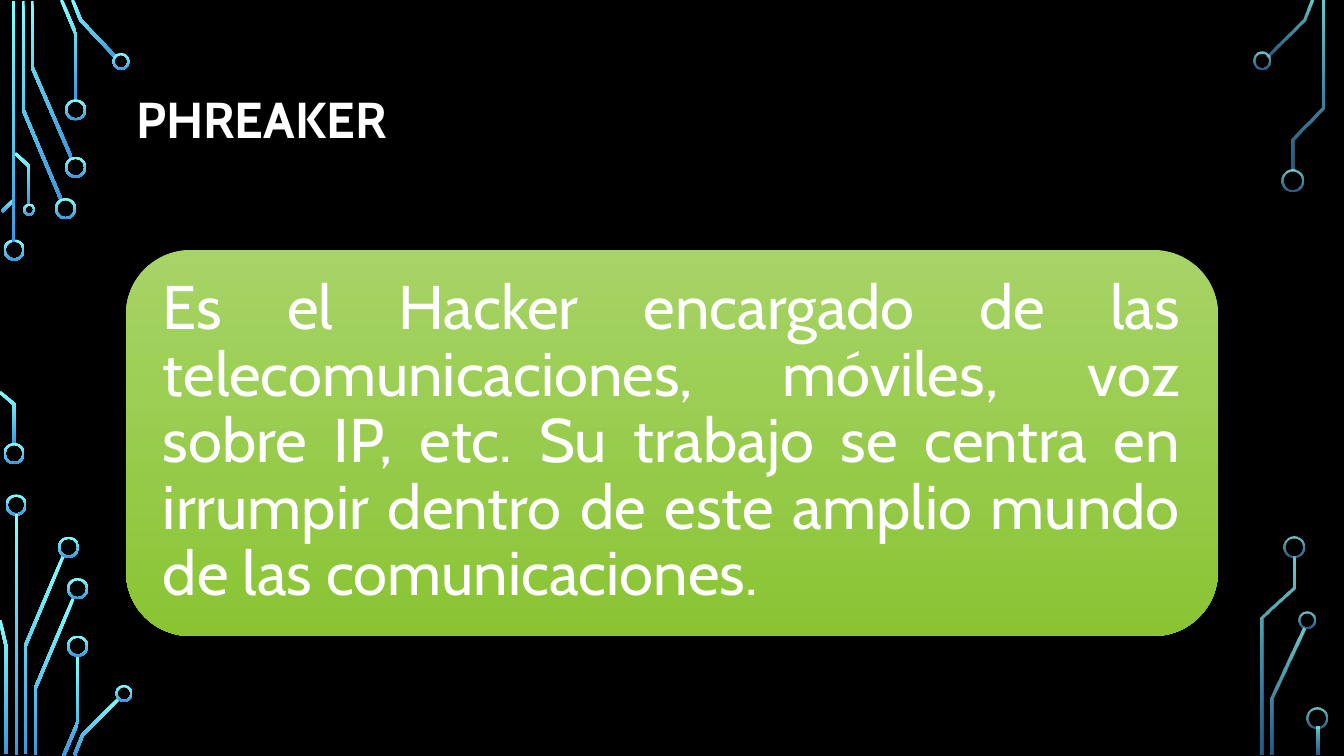
from math import hypot

from lxml.etree import SubElement
from pptx import Presentation
from pptx.dml.color import RGBColor
from pptx.enum.shapes import MSO_SHAPE as Shape
from pptx.enum.text import MSO_ANCHOR as Anchor, PP_ALIGN as Align
from pptx.oxml.ns import qn
from pptx.util import Inches, Pt

COLORS = {
    "background": "000000",
    "text": "FFFFFF",
    "trace_top": "82FFFF",
    "trace_bottom": "3D97DE",
    "panel_top": "A6D467",
    "panel_bottom": "8AC433",
}
FONT = "Cabin"
TRACE_WIDTH = 0.03
RING_WIDTH = 0.02

# Traces are centre lines, rings are (centre x, centre y, diameter),
# bars are (left, top, height); all in inches from the panel corner.
LEFT_CIRCUIT = {
    "traces": [
        [(0.61, 1.99), (0.23, 1.09), (0.23, 0.01)],
        [(0.71, 1.57), (0.32, 0.67), (0.32, 0.01)],
        [(0.75, 1), (0.75, 0.33), (0.61, 0)],
        [(1.15, 0.57), (0.8, 0.2), (0.72, 0)],
        [(0.02, 2.1), (0.14, 1.98)],
        [(0.14, 4.41), (0.14, 4.01), (0, 3.89)],
        [(0.29, 2.03), (0.29, 1.65), (0.15, 1.52)],
        [(0.25, 7.48), (0.25, 6.41), (0.63, 5.51)],
        [(0.06, 7.48), (0.06, 6.41), (0, 6.15)],
        [(0.35, 7.49), (0.35, 6.83), (0.73, 5.93)],
        [(0.63, 7.5), (0.77, 7.17), (0.77, 6.5)],
        [(0.74, 7.49), (0.82, 7.29), (1.18, 6.93)],
    ],
    "rings": [
        (0.14, 2.48, 0.21), (0.14, 4.5, 0.21), (0.65, 2.07, 0.21),
        (0.75, 1.66, 0.21), (0.75, 1.09, 0.21), (1.2, 0.61, 0.17),
        (0.29, 2.08, 0.12), (0.16, 5.01, 0.21), (0.68, 5.43, 0.21),
        (0.77, 5.84, 0.21), (0.77, 6.41, 0.21), (1.23, 6.88, 0.17),
    ],
    "bars": [(0.12, 0.01, 2.39), (0.15, 5.1, 2.39)],
}
RIGHT_CIRCUIT = {
    "traces": [
        [(0.17, 0.56), (0.53, 0.2), (0.61, 0)],
        [(0.22, 7.49), (0.22, 6.93), (0.53, 6.23)],
        [(0.42, 1.69), (0.42, 1.38), (0.72, 1.07), (0.72, 0.01)],
        [(0.12, 7.49), (0.12, 6.13), (0.43, 5.83), (0.43, 5.52)],
    ],
    "rings": [
        (0.12, 0.6, 0.17), (0.42, 1.79, 0.21), (0.56, 6.15, 0.17),
        (0.43, 5.43, 0.21), (0.66, 7.12, 0.21),
    ],
    "bars": [(0.66, 7.21, 0.28)],
}


def paint(shape, top, bottom, opacity=None):
    """Fill with a downward gradient, without line or shadow."""
    shape.shadow.inherit = False
    shape.line.fill.background()
    shape.fill.gradient()
    shape.fill.gradient_angle = 270
    for stop, name in zip(shape.fill.gradient_stops, (top, bottom)):
        stop.color.rgb = RGBColor.from_string(COLORS[name])
    if opacity:
        stops = shape._element.spPr.iter(qn("a:srgbClr"))
        for color, percent in zip(stops, opacity):
            SubElement(color, qn("a:alpha")).set("val", str(percent * 1000))


def write(frame, text, size, bold=False, align=Align.LEFT, anchor=Anchor.MIDDLE,
          insets=(0.1, 0.05, 0.1, 0.05)):
    frame.word_wrap = True
    frame.vertical_anchor = anchor
    (frame.margin_left, frame.margin_top,
     frame.margin_right, frame.margin_bottom) = map(Inches, insets)
    para = frame.paragraphs[0]
    para.alignment = align
    para.line_spacing = 0.9
    span = para.add_run()
    span.text = text
    span.font.name = FONT
    span.font.size = Pt(size)
    span.font.bold = bold
    span.font.color.rgb = RGBColor.from_string(COLORS["text"])


def trace_outline(points):
    """Widen a centre line into a closed band with mitred corners."""
    normals = []
    for (x1, y1), (x2, y2) in zip(points, points[1:]):
        length = hypot(x2 - x1, y2 - y1)
        normals.append(((y1 - y2) / length, (x2 - x1) / length))
    before, after = normals[:1] + normals, normals + normals[-1:]
    one_side, other_side = [], []
    for (x, y), (ax, ay), (bx, by) in zip(points, before, after):
        reach = TRACE_WIDTH / 2 / (1 + ax * bx + ay * by)
        dx, dy = (ax + bx) * reach, (ay + by) * reach
        one_side.append((x + dx, y + dy))
        other_side.append((x - dx, y - dy))
    return one_side + other_side[::-1]


def add_circuit(page, left, top, circuit, opacity=None):
    shapes = []
    for points in circuit["traces"]:
        outline = [(Inches(left + x), Inches(top + y)) for x, y in trace_outline(points)]
        builder = page.shapes.build_freeform(*outline[0])
        builder.add_line_segments(outline[1:], close=True)
        shapes.append(builder.convert_to_shape())
    for x, y, size in circuit["rings"]:
        box = (left + x - size / 2, top + y - size / 2, size, size)
        ring = page.shapes.add_shape(Shape.DONUT, *map(Inches, box))
        ring.adjustments[0] = RING_WIDTH / size
        shapes.append(ring)
    for x, y, height in circuit["bars"]:
        box = (left + x, top + y, TRACE_WIDTH, height)
        shapes.append(page.shapes.add_shape(Shape.RECTANGLE, *map(Inches, box)))
    for shape in shapes:
        paint(shape, "trace_top", "trace_bottom", opacity)


def add_title(page, left, top, width, height, text):
    title = page.shapes.title
    title.left, title.top = Inches(left), Inches(top)
    title.width, title.height = Inches(width), Inches(height)
    write(title.text_frame, text, 36, bold=True, anchor=Anchor.TOP,
          insets=(0.1, 0.26, 0.1, 0.05))


def add_definition(page, left, top, width, height, text):
    box = map(Inches, (left, top, width, height))
    panel = page.shapes.add_shape(Shape.ROUNDED_RECTANGLE, *box)
    paint(panel, "panel_top", "panel_bottom")
    write(panel.text_frame, text, 44, align=Align.JUSTIFY, insets=(0.18,) * 4)


def main():
    deck = Presentation()
    deck.slide_width, deck.slide_height = Inches(13.33), Inches(7.5)
    page = deck.slides.add_slide(deck.slide_layouts[5])
    page.background.fill.solid()
    page.background.fill.fore_color.rgb = RGBColor.from_string(COLORS["background"])
    add_circuit(page, 0, 0, LEFT_CIRCUIT)
    add_circuit(page, 12.4, 0, RIGHT_CIRCUIT, opacity=(80, 60))
    add_title(page, 1.25, 0.68, 10.83, 1.62, "PHREAKER")
    add_definition(
        page, 1.25, 2.48, 10.83, 3.83,
        "Es el Hacker encargado de las telecomunicaciones, móviles, voz sobre IP, etc. "
        "Su trabajo se centra en irrumpir dentro de este amplio mundo de las comunicaciones.")
    deck.save("out.pptx")


if __name__ == "__main__":
    main()
